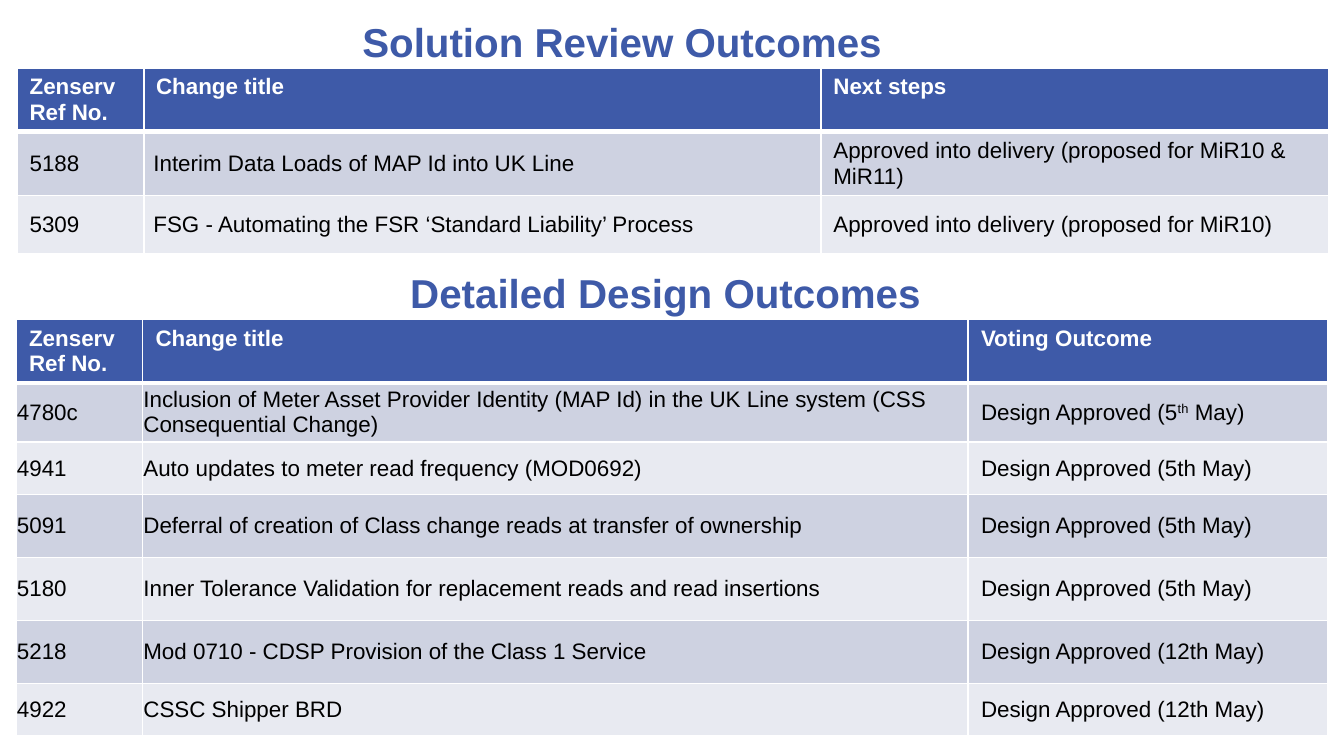
from dataclasses import dataclass

from lxml.etree import SubElement
from pptx import Presentation
from pptx.dml.color import RGBColor
from pptx.enum.text import MSO_ANCHOR, MSO_AUTO_SIZE, PP_ALIGN
from pptx.oxml.ns import qn
from pptx.util import Cm, Pt


@dataclass(frozen=True)
class Theme:
    """Colours, type sizes and line widths of the deck."""
    font: str = "Arial"
    blue: str = "3E5AA8"
    white: str = "FFFFFF"
    black: str = "000000"
    bands: tuple = ("CED2E1", "E8EAF1")
    heading: float = 21.6
    body: float = 12
    thin: float = 1
    thick: float = 3


@dataclass(frozen=True)
class Box:
    """A rectangle in centimetres."""
    left: float
    top: float
    width: float
    height: float

    def lengths(self):
        """Return left, top, width and height as lengths."""
        return Cm(self.left), Cm(self.top), Cm(self.width), Cm(self.height)


THEME = Theme()
REFERENCE = "Zenserv Ref No."
FIFTH = "Design Approved (5th May)"
TWELFTH = "Design Approved (12th May)"

REVIEW_ROWS = [
    (REFERENCE, "Change title", "Next steps"),
    ("5188", "Interim Data Loads of MAP Id into UK Line",
     "Approved into delivery (proposed for MiR10 & MiR11)"),
    ("5309", "FSG - Automating the FSR ‘Standard Liability’ Process",
     "Approved into delivery (proposed for MiR10)"),
]
DESIGN_ROWS = [
    (REFERENCE, "Change title", "Voting Outcome"),
    ("4780c", "Inclusion of Meter Asset Provider Identity (MAP Id) in the UK Line system "
     "(CSS Consequential Change)", "Design Approved (5^th^ May)"),
    ("4941", "Auto updates to meter read frequency (MOD0692)", FIFTH),
    ("5091", "Deferral of creation of Class change reads at transfer of ownership", FIFTH),
    ("5180", "Inner Tolerance Validation for replacement reads and read insertions", FIFTH),
    ("5218", "Mod 0710 - CDSP Provision of the Class 1 Service", TWELFTH),
    ("4922", "CSSC Shipper BRD", TWELFTH),
]


def write_text(frame, text, size=THEME.body, color=THEME.black, bold=False,
               align=PP_ALIGN.LEFT):
    """Write one paragraph, raising any part between carets."""
    para = frame.paragraphs[0]
    para.alignment = align
    for index, part in enumerate(text.split("^")):
        span = para.add_run()
        span.text = part
        span.font.name = THEME.font
        span.font.size = Pt(size)
        span.font.bold = bold
        span.font.color.rgb = RGBColor.from_string(color)
        if index % 2:
            span.font._element.set("baseline", "30000")


def place_heading(shape, box, text):
    """Place a centred section heading in the box."""
    shape.left, shape.top, shape.width, shape.height = box.lengths()
    frame = shape.text_frame
    frame.word_wrap = True
    frame.auto_size = MSO_AUTO_SIZE.NONE
    frame.vertical_anchor = MSO_ANCHOR.MIDDLE
    write_text(frame, text, size=THEME.heading, color=THEME.blue, bold=True,
               align=PP_ALIGN.CENTER)


def draw_borders(cell, top, bottom):
    """Draw white borders with the given top and bottom widths."""
    properties = cell._tc.get_or_add_tcPr()
    widths = {"L": THEME.thin, "R": THEME.thin, "T": top, "B": bottom}
    for side, width in widths.items():
        line = SubElement(properties, qn(f"a:ln{side}"), w=str(Pt(width)))
        fill = SubElement(line, qn("a:solidFill"))
        SubElement(fill, qn("a:srgbClr"), val=THEME.white)


def format_cell(cell, text, row, inset):
    """Format a header or banded body cell and write its text."""
    header = row == 0
    draw_borders(cell, top=THEME.thick if row == 1 else THEME.thin,
                 bottom=THEME.thick if header else THEME.thin)
    cell.fill.solid()
    cell.fill.fore_color.rgb = RGBColor.from_string(
        THEME.blue if header else THEME.bands[(row - 1) % 2])
    cell.vertical_anchor = MSO_ANCHOR.TOP if header else MSO_ANCHOR.MIDDLE
    side, end = inset
    cell.margin_left = cell.margin_right = Cm(side)
    cell.margin_top = cell.margin_bottom = Cm(end)
    write_text(cell.text_frame, text, color=THEME.white if header else THEME.black,
               bold=header)


def place_table(page, box, rows, columns, heights, insets):
    """Place an outcome table in the box with one body inset per column."""
    table = page.shapes.add_table(len(rows), len(columns), *box.lengths()).table
    for column, width in zip(table.columns, columns):
        column.width = Cm(width)
    for row, (values, height) in enumerate(zip(rows, heights)):
        table.rows[row].height = Cm(height)
        for column, text in enumerate(values):
            inset = insets[column] if row else insets[-1]
            format_cell(table.cell(row, column), text, row, inset)


def place_section(page, heading, box, title, title_left, rows, columns, heights, insets):
    """Place a heading above its table, both relative to the box."""
    place_heading(heading, Box(title_left, box.top, 22.86, 1), title)
    table_box = Box(box.left, box.top + 1, box.width, box.height - 1)
    place_table(page, table_box, rows, columns, heights, insets)


def main():
    """Build and save the outcomes slide."""
    deck = Presentation()
    deck.slide_width, deck.slide_height = Cm(25.4), Cm(14.29)
    page = deck.slides.add_slide(deck.slide_layouts[5])
    normal, tight = (0.23, 0.13), (0.02, 0.02)
    place_section(page, page.shapes.title, Box(0.33, 0.28, 24.79, 4.42),
                  "Solution Review Outcomes", 0.33, REVIEW_ROWS,
                  (2.39, 12.8, 9.6), (1.19, 1.14, 1.09),
                  (normal, (0.18, 0), normal))
    second = page.shapes.add_textbox(0, 0, 0, 0)
    place_section(page, second, Box(0.3, 5.03, 24.79, 8.86),
                  "Detailed Design Outcomes", 1.15, DESIGN_ROWS,
                  (2.39, 15.6, 6.8), (1.19, 1.12, 0.99, 1.19, 1.19, 1.19, 0.99),
                  (tight, tight, (0.25, 0.13)))
    deck.save("out.pptx")


if __name__ == "__main__":
    main()
